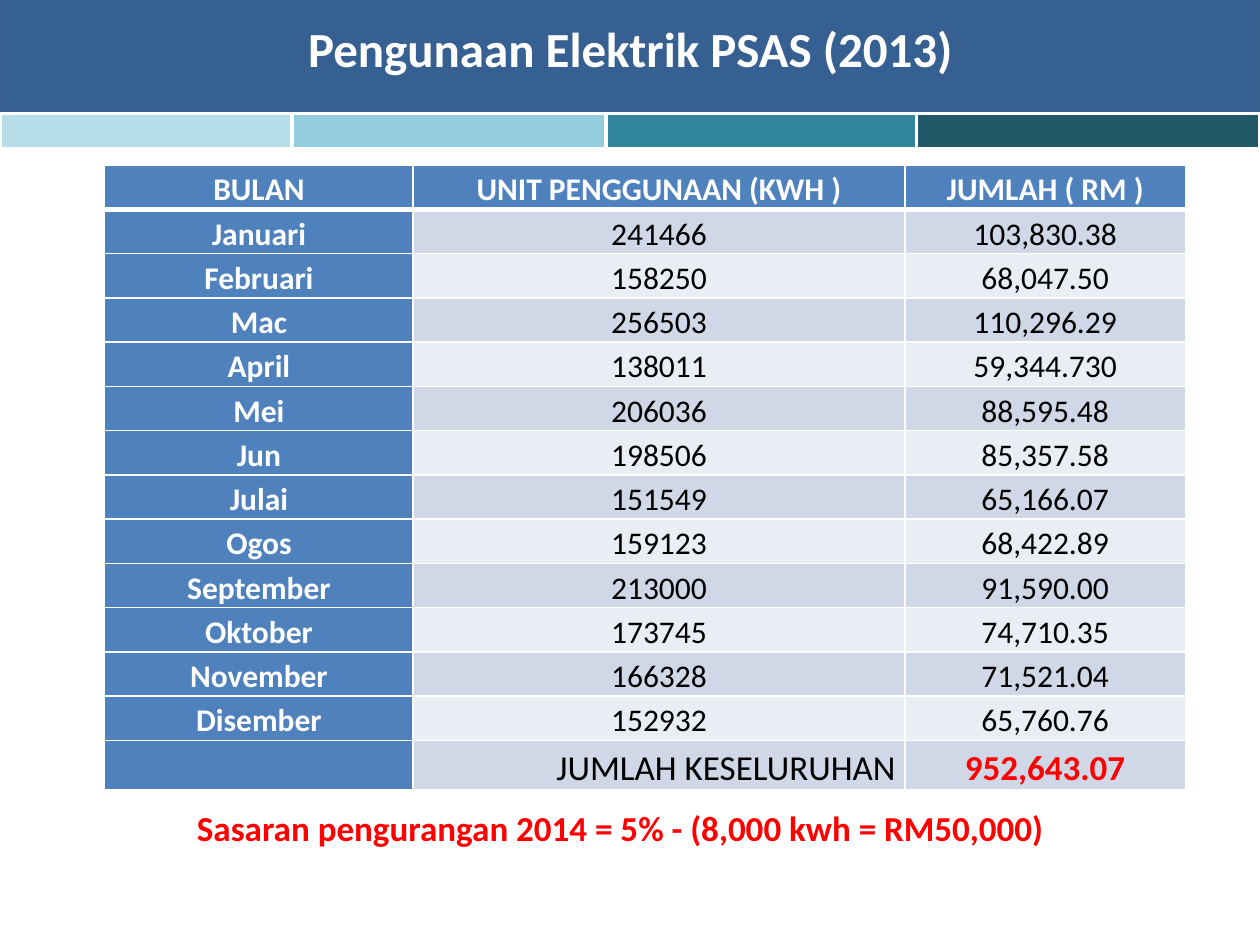
import dataclasses
import typing

import lxml.etree
import pptx
import pptx.dml.color
import pptx.enum.shapes
import pptx.enum.text
import pptx.oxml.ns
import pptx.util

Cm = pptx.util.Cm
Pt = pptx.util.Pt
ALIGN = pptx.enum.text.PP_ALIGN
ANCHOR = pptx.enum.text.MSO_ANCHOR

COLOURS = {
    "white": "FFFFFF", "black": "000000", "red": "FF0000",
    "header": "376092", "header_edge": "3A5F8C",
    "pale": "B7DEE8", "light": "93CDDD", "teal": "31859C", "dark": "215968",
    "month": "4F81BD", "odd": "D0D8E8", "even": "E9EDF4",
}


@dataclasses.dataclass(frozen=True)
class Band:
    left: float
    top: float
    width: float
    height: float
    fill: str
    edge: str = "white"


@dataclasses.dataclass(frozen=True)
class CellLook:
    fill: str
    colour: str = "black"
    size: int = 18
    bold: bool = False
    align: ALIGN = ALIGN.CENTER


BANDS = [
    Band(0, -0.03, 25.4, 2.31, "header", "header_edge"),
    Band(0, 2.29, 5.89, 0.71, "pale"),
    Band(5.89, 2.29, 6.33, 0.71, "light"),
    Band(12.22, 2.29, 6.26, 0.71, "teal"),
    Band(18.48, 2.29, 6.92, 0.71, "dark"),
]

USAGE = [
    ("BULAN", "UNIT PENGGUNAAN (KWH )", "JUMLAH ( RM )"),
    ("Januari", "241466", "103,830.38"),
    ("Februari", "158250", "68,047.50"),
    ("Mac", "256503", "110,296.29"),
    ("April", "138011", "59,344.730"),
    ("Mei", "206036", "88,595.48"),
    ("Jun", "198506", "85,357.58"),
    ("Julai", "151549", "65,166.07"),
    ("Ogos", "159123", "68,422.89"),
    ("September", "213000", "91,590.00"),
    ("Oktober", "173745", "74,710.35"),
    ("November", "166328", "71,521.04"),
    ("Disember", "152932", "65,760.76"),
    ("", "JUMLAH KESELURUHAN", "952,643.07"),
]
TOTAL_ROW = len(USAGE) - 1
COLUMN_WIDTHS = (6.22, 9.91, 5.66)


def rgb(name: str) -> pptx.dml.color.RGBColor:
    return pptx.dml.color.RGBColor.from_string(COLOURS[name])


def apply(target: typing.Any, values: dict[str, typing.Any]) -> None:
    for name, value in values.items():
        setattr(target, name, value)


def write(frame: typing.Any, wording: str, look: CellLook, spacing: float = 1.0) -> None:
    paragraph = frame.paragraphs[0]
    apply(paragraph, {"alignment": look.align, "line_spacing": spacing, "space_before": Pt(0)})
    if wording:
        paragraph.add_run().text = wording
    for part in (paragraph, *paragraph.runs):
        apply(part.font, {"name": "Calibri", "size": Pt(look.size), "bold": look.bold})
        part.font.color.rgb = rgb(look.colour)


def draw_band(shapes: typing.Any, band: Band) -> None:
    strip = shapes.add_shape(
        pptx.enum.shapes.MSO_SHAPE.RECTANGLE,
        Cm(band.left), Cm(band.top), Cm(band.width), Cm(band.height),
    )
    strip.shadow.inherit = False
    strip.fill.solid()
    strip.fill.fore_color.rgb = rgb(band.fill)
    strip.line.color.rgb = rgb(band.edge)
    strip.line.width = Pt(2)


def draw_borders(cell: typing.Any, widths: dict[str, int]) -> None:
    qn = pptx.oxml.ns.qn
    properties = cell._tc.get_or_add_tcPr()
    for side, width in widths.items():
        border = lxml.etree.SubElement(properties, qn(f"a:ln{side}"), w=str(Pt(width)))
        solid = lxml.etree.SubElement(border, qn("a:solidFill"))
        lxml.etree.SubElement(solid, qn("a:srgbClr"), val=COLOURS["white"])


def cell_look(row: int, column: int) -> CellLook:
    if row == 0 or column == 0:
        return CellLook("month", "white", bold=True)
    if row == TOTAL_ROW:
        if column == 1:
            return CellLook("odd", size=20, align=ALIGN.RIGHT)
        return CellLook("odd", "red", 20, True)
    return CellLook("odd" if row % 2 else "even")


def draw_usage_table(shapes: typing.Any) -> None:
    usage_frame = shapes.add_table(
        len(USAGE), len(COLUMN_WIDTHS), Cm(2.11), Cm(3.33), Cm(sum(COLUMN_WIDTHS)), Cm(12.37)
    )
    usage = usage_frame.table
    for column, width in enumerate(COLUMN_WIDTHS):
        usage.columns[column].width = Cm(width)
    for row, entries in enumerate(USAGE):
        usage.rows[row].height = Cm(0.81 if row in (0, TOTAL_ROW) else 0.74)
        for column, wording in enumerate(entries):
            cell = usage.cell(row, column)
            look = cell_look(row, column)
            apply(cell, {
                "margin_left": Cm(0.18), "margin_right": Cm(0.18),
                "margin_top": 0, "margin_bottom": 0, "vertical_anchor": ANCHOR.TOP,
            })
            draw_borders(cell, {
                "L": 1, "R": 1, "T": 3 if row == 1 else 1, "B": 3 if row == 0 else 1,
            })
            cell.fill.solid()
            cell.fill.fore_color.rgb = rgb(look.fill)
            write(cell.text_frame, wording, look, 1.15)
    usage_frame.height = Cm(12.37)


def place_heading(
    holder: typing.Any, box: tuple[float, float, float, float], wording: str, look: CellLook
) -> None:
    apply(holder, dict(zip(("left", "top", "width", "height"), map(Cm, box))))
    apply(holder.text_frame, {
        "word_wrap": True, "vertical_anchor": ANCHOR.TOP,
        "auto_size": pptx.enum.text.MSO_AUTO_SIZE.NONE,
    })
    write(holder.text_frame, wording, look)
    holder.element.getparent().append(holder.element)


def main() -> None:
    deck = pptx.Presentation()
    apply(deck, {"slide_width": Cm(25.4), "slide_height": Cm(19.05)})
    slide = deck.slides.add_slide(deck.slide_layouts[0])
    header = slide.shapes.add_group_shape()
    for band in BANDS:
        draw_band(header.shapes, band)
    draw_usage_table(slide.shapes)
    place_heading(
        slide.shapes.title, (1.3, 0.25, 22.81, 1.45),
        "Pengunaan Elektrik PSAS (2013)", CellLook("header", "white", 28, True),
    )
    place_heading(
        slide.placeholders[1], (0.51, 16.13, 24, 1.6),
        "Sasaran pengurangan 2014 = 5% - (8,000 kwh = RM50,000)",
        CellLook("white", "red", 20, True),
    )
    deck.save("out.pptx")


if __name__ == "__main__":
    main()
